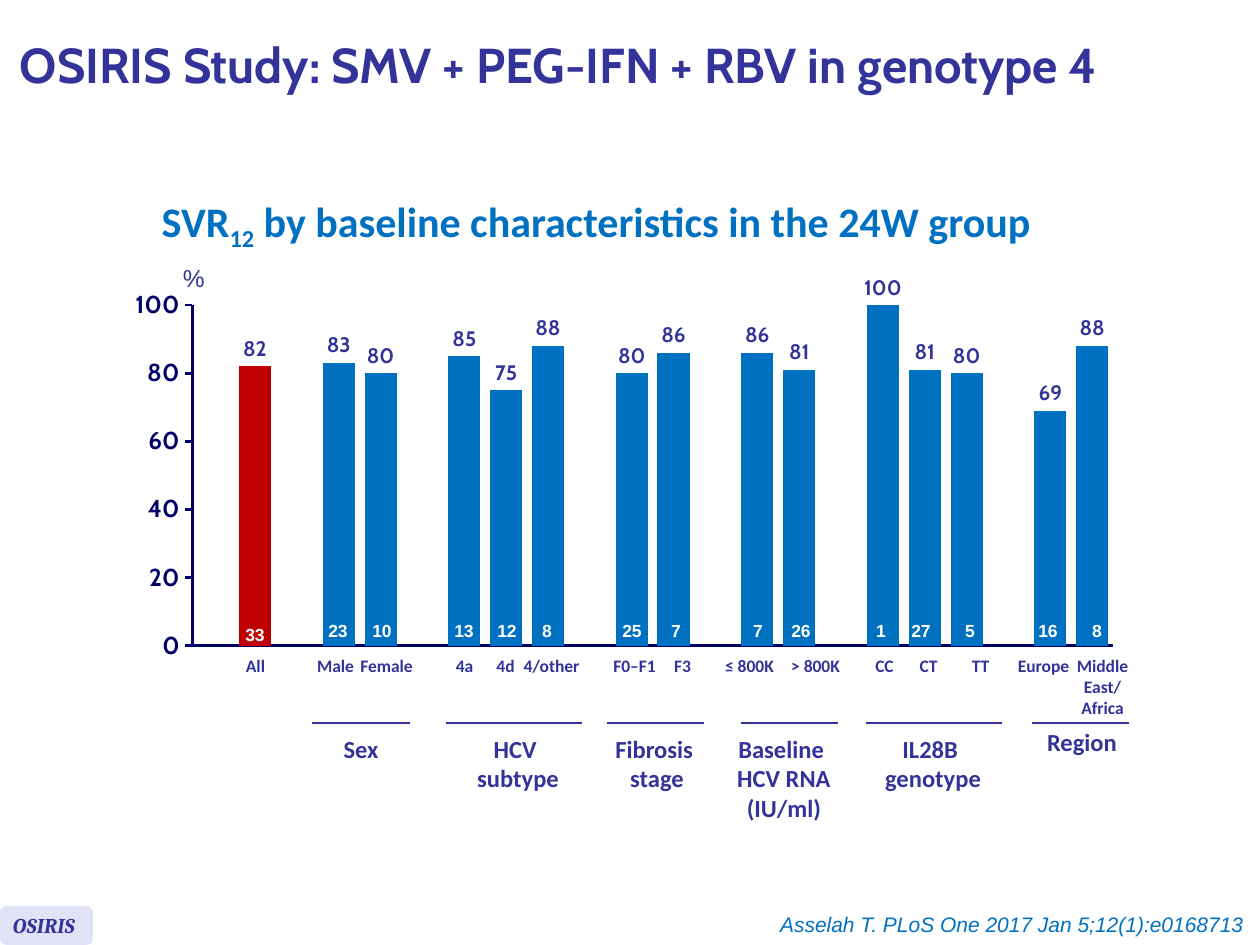
import lxml.etree
import pptx
import pptx.chart.data
import pptx.dml.color
import pptx.enum.chart
import pptx.enum.shapes
import pptx.enum.text
import pptx.oxml
import pptx.oxml.ns
import pptx.util

SCALE = 914400 / 126
NAVY, BLUE, AXIS, RED, WHITE = "333399", "0070C0", "000066", "C00000", "FFFFFF"
LEFT, CENTER, RIGHT = (pptx.enum.text.PP_ALIGN.LEFT, pptx.enum.text.PP_ALIGN.CENTER,
                       pptx.enum.text.PP_ALIGN.RIGHT)
color = pptx.dml.color.RGBColor.from_string


def px(*lengths):
    return [pptx.util.Emu(round(length * SCALE)) for length in lengths]


def add_text(words, place, size, font="Calibri", fill=NAVY, align=CENTER,
             bold=True, italic=False, inset=(13, 6), wrap=True):
    box = slide.shapes.add_textbox(*px(*place))
    frame = box.text_frame
    frame.word_wrap = wrap
    frame.margin_left = frame.margin_right = px(inset[0])[0]
    frame.margin_top = frame.margin_bottom = px(inset[1])[0]
    para = frame.paragraphs[0]
    para.text = words
    para.alignment = align
    for span in para.runs:
        span.font.name = font
        span.font.size = pptx.util.Pt(size)
        span.font.bold = bold
        span.font.italic = italic
        span.font.color.rgb = color(fill)
    return box


deck = pptx.Presentation()
deck.slide_width, deck.slide_height = px(1260, 945)
slide = deck.slides.add_slide(deck.slide_layouts[5])

title = slide.shapes.title
title.left, title.top, title.width, title.height = px(149, 155, 964, 135)
title.text_frame.vertical_anchor = pptx.enum.text.MSO_ANCHOR.MIDDLE
para = title.text_frame.paragraphs[0]
para.alignment = LEFT
para.line_spacing = 0.85
for words in ("SVR", "12", " by baseline characteristics in the 24W group"):
    span = para.add_run()
    span.text = words
    span.font.name = "Calibri"
    span.font.size = pptx.util.Pt(24)
    span.font.bold = True
    span.font.color.rgb = color(BLUE)
para.runs[1].font._element.set("baseline", "-25000")

# category, label centre, response, patients, patients centre
bars = {
    2: ("All", 255, 82, 33, 255),
    4: ("Male", 335, 83, 23, 338),
    5: ("Female", 386, 80, 10, 382),
    7: ("4a", 464, 85, 13, 464),
    8: ("4d", 505, 75, 12, 507),
    9: ("4/other", 551, 88, 8, 547),
    11: ("F0–F1", 634, 80, 25, 632),
    12: ("F3", 682, 86, 7, 676),
    14: ("≤ 800K", 749, 86, 7, 758),
    15: ("> 800K", 815, 81, 26, 801),
    17: ("CC", 884, 100, 1, 881),
    18: ("CT", 928, 81, 27, 921),
    19: ("TT", 980, 80, 5, 970),
    21: ("Europe", 1043, 69, 16, 1048),
    22: ("Middle East/\nAfrica", 1102, 88, 8, 1097),
}
slots = range(1, 23)
data = pptx.chart.data.CategoryChartData()
data.categories = [str(slot) for slot in slots]
data.add_series("Series 1", [bars[slot][2] if slot in bars else None for slot in slots])
chart = slide.shapes.add_chart(pptx.enum.chart.XL_CHART_TYPE.COLUMN_CLUSTERED,
                               *px(42, 223, 1193, 633), data).chart
chart.has_legend = False
chart.has_title = False
chart.font.name = "Arial"
chart.font.size = pptx.util.Pt(18)

plot = chart.plots[0]
plot.gap_width = 30
plot.vary_by_categories = False
series = plot.series[0]
series.format.fill.solid()
series.format.fill.fore_color.rgb = color(BLUE)
overall = series.points[1].format.fill
overall.solid()
overall.fore_color.rgb = color(RED)
labels = series.data_labels
labels.show_value = True
labels.position = pptx.enum.chart.XL_LABEL_POSITION.OUTSIDE_END

values = chart.value_axis
values.minimum_scale, values.maximum_scale, values.major_unit = 0, 100, 20
values.has_major_gridlines = False
values.major_tick_mark = pptx.enum.chart.XL_TICK_MARK.OUTSIDE
categories = chart.category_axis
categories.major_tick_mark = pptx.enum.chart.XL_TICK_MARK.NONE
categories.tick_label_position = pptx.enum.chart.XL_TICK_LABEL_POSITION.NONE
for axis in (values, categories):
    axis.format.line.color.rgb = color(AXIS)
    axis.format.line.width = pptx.util.Pt(1.5)
for font, size, fill in ((labels.font, 12, NAVY), (values.tick_labels.font, 14, AXIS)):
    font.name = "Cabin"
    font.size = pptx.util.Pt(size)
    font.bold = True
    font.color.rgb = color(fill)

area = chart._chartSpace.chart.plotArea
for old in area.findall(pptx.oxml.ns.qn("c:layout")):
    area.remove(old)
area.insert(0, pptx.oxml.parse_xml(
    f'<c:layout {pptx.oxml.ns.nsdecls("c")}><c:manualLayout>'
    '<c:layoutTarget val="inner"/><c:xMode val="edge"/><c:yMode val="edge"/>'
    '<c:x val="0.126"/><c:y val="0.13"/><c:w val="0.772"/><c:h val="0.538"/>'
    '</c:manualLayout></c:layout>'))

for category, center, response, patients, patients_center in bars.values():
    add_text(category, (center - 48, 649, 97, 34), 10)
    top = 616 if category == "All" else 612
    add_text(str(patients), (patients_center - 30, top, 60, 44), 10, "Arial", WHITE,
             inset=(15, 8))

groups = [
    ("Sex", 361, 726, 312, 410),
    ("HCV \nsubtype", 518, 726, 446, 582),
    ("Fibrosis \nstage", 657, 726, 607, 704),
    ("Baseline \nHCV RNA\n(IU/ml)", 784, 726, 741, 838),
    ("IL28B \ngenotype", 933, 726, 866, 1002),
    ("Region", 1082, 719, 1032, 1129),
]
for name, center, top, start, end in groups:
    rule = slide.shapes.add_connector(pptx.enum.shapes.MSO_CONNECTOR.STRAIGHT,
                                      *px(start, 723, end, 723))
    rule.line.color.rgb = color(NAVY)
    rule.line.width = pptx.util.Pt(1.5)
    lxml.etree.SubElement(rule._element.spPr, pptx.oxml.ns.qn("a:effectLst"))
    height = 45 + 30 * name.count("\n")
    add_text(name, (center - 129, top, 258, height), 14, inset=(15, 8))

badge = slide.shapes.add_shape(pptx.enum.shapes.MSO_SHAPE.ROUNDED_RECTANGLE,
                               *px(0, 906, 93, 39))
badge.shadow.inherit = False
badge.fill.solid()
badge.fill.fore_color.rgb = color("E2E2F6")
badge.line.fill.background()
add_text("OSIRIS", (0, 907, 96, 38), 12, "Cambria", align=LEFT, italic=True)

heading = add_text("OSIRIS Study: SMV + PEG-IFN + RBV in genotype 4",
                   (7, 6, 1239, 125), 28, "Cabin", align=LEFT)
heading.text_frame.vertical_anchor = pptx.enum.text.MSO_ANCHOR.MIDDLE
heading.text_frame.paragraphs[0].line_spacing = 0.85
add_text("%", (170, 257, 48, 43), 14, "Arial", align=LEFT, bold=False, wrap=False)
add_text("Asselah T. PLoS One 2017 Jan 5;12(1):e0168713", (756, 906, 501, 38), 12,
         "Arial", BLUE, RIGHT, bold=False, italic=True)

deck.save("out.pptx")
